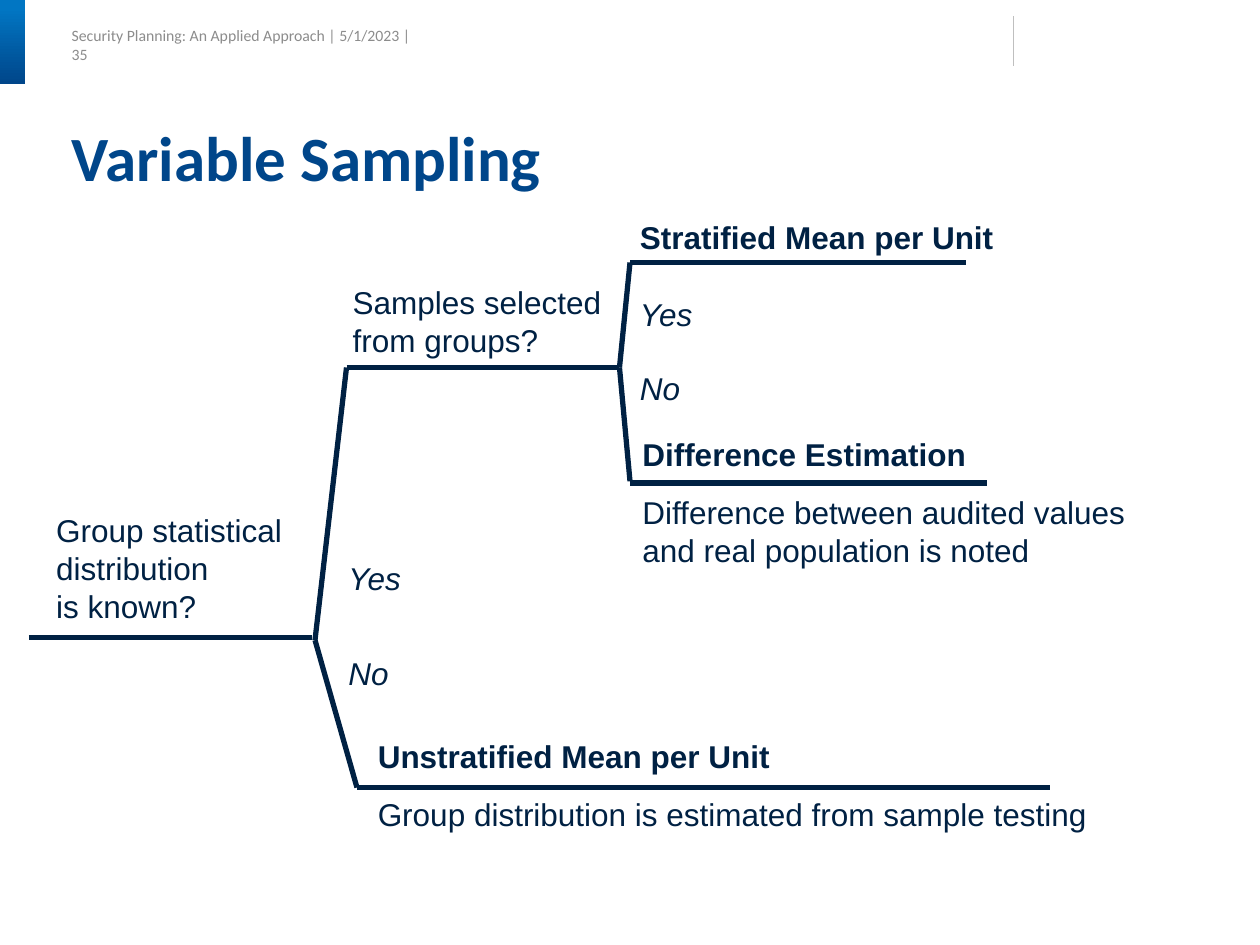
from dataclasses import dataclass

from lxml.etree import SubElement
from pptx import Presentation
from pptx.dml.color import RGBColor
from pptx.enum.shapes import MSO_CONNECTOR as Connector, MSO_SHAPE as Preset
from pptx.enum.text import MSO_ANCHOR as Anchor, MSO_AUTO_SIZE as AutoSize, PP_ALIGN as Align
from pptx.oxml.ns import qn
from pptx.shapes.autoshape import Shape
from pptx.slide import Slide
from pptx.text.text import TextFrame
from pptx.util import Pt


@dataclass(frozen=True)
class Theme:
    navy: str = "002143"
    blue: str = "00468A"
    bright: str = "0176C3"
    grey: str = "8C8C8C"
    rule: str = "BFBFBF"
    heading_font: str = "Calibri"
    body_font: str = "Arial"
    title_size: float = 36
    body_size: float = 18
    header_size: float = 9
    branch_width: float = 3
    rule_width: float = 0.75


@dataclass(frozen=True)
class Label:
    left: float
    top: float
    width: float
    height: float
    text: str
    detail: str = ""
    gap: float = 11.5
    bold: bool = False
    italic: bool = False


THEME = Theme()

BRANCHES = (
    ((16.5, 364.3), (178.5, 364.3)),
    ((180, 365.8), (198, 210)),
    ((180, 365.8), (204, 450)),
    ((198, 210), (354, 210)),
    ((204, 450), (600, 450)),
    ((354, 210), (360, 150)),
    ((354, 210), (360, 275)),
    ((360, 150), (552, 150)),
    ((360, 276), (564, 276)),
)

LABELS = (
    Label(25, 288.7, 144.7, 72.7, "Group statistical\ndistribution\nis known?"),
    Label(192, 316.1, 45.4, 28.8, "Yes", italic=True),
    Label(192, 370.1, 37.4, 28.8, "No", italic=True),
    Label(194.4, 158.4, 157.7, 51, "Samples selected\nfrom groups?"),
    Label(208.8, 417.6, 423.4, 65.5, "Unstratified Mean per Unit",
          "Group distribution is estimated from sample testing", bold=True),
    Label(358.6, 121, 216.7, 28.8, "Stratified Mean per Unit", bold=True),
    Label(358.6, 164.9, 45.4, 72, "Yes", "No", gap=21, italic=True),
    Label(360, 245, 293, 87.1, "Difference Estimation",
          "Difference between audited values\nand real population is noted", bold=True),
)


def write_text(frame: TextFrame, text: str, *, font: str = THEME.body_font,
               size: float = THEME.body_size, color: str = THEME.navy,
               bold: bool = False, italic: bool = False,
               space_before: float = 0, line_spacing: float = 1) -> None:
    """Write each line of text as a formatted paragraph after any existing text."""
    for index, line in enumerate(text.split("\n")):
        paragraph = frame.add_paragraph() if frame.text else frame.paragraphs[0]
        paragraph.alignment = Align.LEFT
        paragraph.line_spacing = line_spacing
        paragraph.space_before = Pt(space_before if index == 0 else 0)
        run = paragraph.add_run()
        run.text = line
        run.font.name, run.font.size = font, Pt(size)
        run.font.bold, run.font.italic = bold, italic
        run.font.color.rgb = RGBColor.from_string(color)


def clear_margins(frame: TextFrame) -> None:
    """Remove the insets of a text frame and centre its text vertically."""
    frame.margin_left = frame.margin_right = frame.margin_top = frame.margin_bottom = 0
    frame.vertical_anchor = Anchor.MIDDLE


def draw_line(slide: Slide, start: tuple[float, float], end: tuple[float, float],
              color: str = THEME.navy, width: float = THEME.branch_width) -> None:
    """Draw a straight line without a shadow."""
    line = slide.shapes.add_connector(
        Connector.STRAIGHT, *(Pt(value) for value in (*start, *end)))
    line.line.color.rgb = RGBColor.from_string(color)
    line.line.width = Pt(width)
    SubElement(line._element.spPr, qn("a:effectLst"))


def add_box(slide: Slide, left: float, top: float, width: float, height: float) -> Shape:
    """Add a text box that keeps its lines unbroken."""
    box = slide.shapes.add_textbox(Pt(left), Pt(top), Pt(width), Pt(height))
    box.text_frame.word_wrap = False
    return box


def draw_label(slide: Slide, label: Label) -> None:
    """Draw a label with its optional detail below."""
    frame = add_box(slide, label.left, label.top, label.width, label.height).text_frame
    frame.auto_size = AutoSize.SHAPE_TO_FIT_TEXT
    write_text(frame, label.text, bold=label.bold, italic=label.italic)
    if label.detail:
        write_text(frame, label.detail, italic=label.italic, space_before=label.gap)


def draw_header(slide: Slide) -> None:
    """Draw the running header, the corner accent and the divider."""
    header = add_box(slide, 41, 17, 204.5, 17).text_frame
    clear_margins(header)
    write_text(header, "Security Planning: An Applied Approach | 5/1/2023 | 35",
               font=THEME.heading_font, size=THEME.header_size, color=THEME.grey)

    accent = slide.shapes.add_shape(Preset.ROUNDED_RECTANGLE, 0, 0, Pt(14.4), Pt(48))
    accent.adjustments[0] = 0
    accent.shadow.inherit = False
    accent.line.fill.background()
    accent.fill.gradient()
    accent.fill.gradient_angle = 270
    shades = ((0.1, THEME.bright), (1, THEME.blue))
    for stop, (position, color) in zip(accent.fill.gradient_stops, shades):
        stop.position = position
        stop.color.rgb = RGBColor.from_string(color)

    draw_line(slide, (579, 9.3), (579, 37.5), THEME.rule, THEME.rule_width)


def draw_title(slide: Slide) -> None:
    """Place and format the slide title."""
    title = slide.shapes.title
    title.left, title.top, title.width, title.height = Pt(41), Pt(72), Pt(642), Pt(39.6)
    clear_margins(title.text_frame)
    title.text_frame.auto_size = AutoSize.NONE
    write_text(title.text_frame, "Variable Sampling", font=THEME.heading_font,
               size=THEME.title_size, color=THEME.blue, bold=True, line_spacing=0.9)


def main() -> None:
    """Build the decision tree slide and save it."""
    deck = Presentation()
    deck.slide_width, deck.slide_height = Pt(720), Pt(540)
    slide = deck.slides.add_slide(deck.slide_layouts[5])
    draw_header(slide)
    draw_title(slide)
    for start, end in BRANCHES:
        draw_line(slide, start, end)
    for label in LABELS:
        draw_label(slide, label)
    deck.save("out.pptx")


if __name__ == "__main__":
    main()
